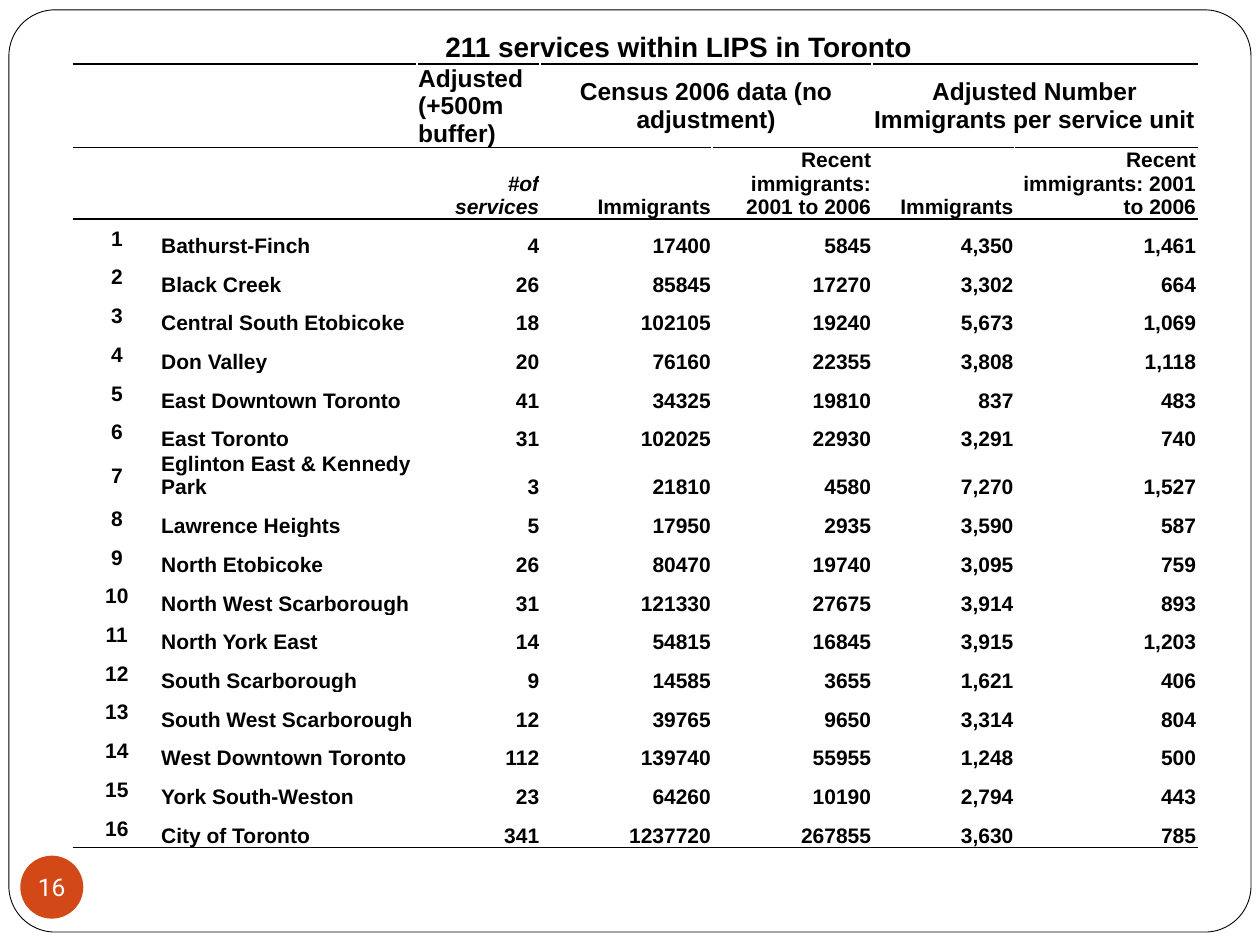
from lxml import etree
from pptx import Presentation
from pptx.dml.color import RGBColor
from pptx.enum import shapes, text
from pptx.oxml.ns import qn
from pptx.util import Cm, Pt

BLACK = RGBColor(0x00, 0x00, 0x00)
WHITE = RGBColor(0xFF, 0xFF, 0xFF)
ORANGE = RGBColor(0xD3, 0x48, 0x17)

LEFT, MID, RIGHT = text.PP_ALIGN.LEFT, text.PP_ALIGN.CENTER, text.PP_ALIGN.RIGHT
MIDDLE, BOTTOM = text.MSO_ANCHOR.MIDDLE, text.MSO_ANCHOR.BOTTOM

WIDTHS = [1.75, 5.18, 2.48, 3.46, 3.23, 2.87, 3.68]
HEADS = [0.64, 1.66, 1.43]
ROW, TALL = 0.78, 0.95

RECENT = "Recent immigrants: 2001 to 2006"
LABELS = ["#of services", "Immigrants", RECENT, "Immigrants", RECENT]

# Area, services, immigrants, recent, immigrants per unit, recent per unit
AREAS = [
    ("Bathurst-Finch", "4", "17400", "5845", "4,350", "1,461"),
    ("Black Creek", "26", "85845", "17270", "3,302", "664"),
    ("Central South Etobicoke", "18", "102105", "19240", "5,673", "1,069"),
    ("Don Valley", "20", "76160", "22355", "3,808", "1,118"),
    ("East Downtown Toronto", "41", "34325", "19810", "837", "483"),
    ("East Toronto", "31", "102025", "22930", "3,291", "740"),
    ("Eglinton East & Kennedy Park", "3", "21810", "4580", "7,270", "1,527"),
    ("Lawrence Heights", "5", "17950", "2935", "3,590", "587"),
    ("North Etobicoke", "26", "80470", "19740", "3,095", "759"),
    ("North West Scarborough", "31", "121330", "27675", "3,914", "893"),
    ("North York East", "14", "54815", "16845", "3,915", "1,203"),
    ("South Scarborough", "9", "14585", "3655", "1,621", "406"),
    ("South West Scarborough", "12", "39765", "9650", "3,314", "804"),
    ("West Downtown Toronto", "112", "139740", "55955", "1,248", "500"),
    ("York South-Weston", "23", "64260", "10190", "2,794", "443"),
    ("City of Toronto", "341", "1237720", "267855", "3,630", "785"),
]


def write(frame, words, size=12, font="Arial", color=BLACK, bold=True,
          italic=False, align=LEFT):
    para = frame.paragraphs[0]
    para.alignment = align
    run = para.add_run()
    run.text = words
    face = run.font
    face.size, face.name = Pt(size), font
    face.bold, face.italic = bold, italic
    face.color.rgb = color


def shape(slide, kind, box, fill):
    item = slide.shapes.add_shape(kind, *[Cm(v) for v in box])
    item.shadow.inherit = False
    item.fill.solid()
    item.fill.fore_color.rgb = fill
    return item


def rule(cell, side):
    """Draw a black line on one side of a cell: lnT or lnB."""
    props = cell._tc.get_or_add_tcPr()
    line = etree.Element(qn("a:" + side), w=str(Pt(1)))
    fill = etree.SubElement(line, qn("a:solidFill"))
    etree.SubElement(fill, qn("a:srgbClr"), val=str(BLACK))
    # Lines come before the fill, top before bottom
    props.insert(len(props.findall(qn("a:lnT"))), line)


def clear(cell):
    cell.fill.background()
    cell.margin_left = cell.margin_right = cell.margin_top = Cm(0.02)
    cell.margin_bottom = 0
    cell.text_frame.paragraphs[0].font.size = Pt(12)


def put(cell, words, anchor=BOTTOM, **look):
    cell.vertical_anchor = anchor
    write(cell.text_frame, words, **look)


def heads(grid):
    # Title and column groups
    for row, first, last in ((0, 1, 6), (1, 3, 4), (1, 5, 6)):
        grid.cell(row, first).merge(grid.cell(row, last))
    put(grid.cell(0, 1), "211 services within LIPS in Toronto", size=16, align=MID)
    put(grid.cell(1, 2), "Adjusted (+500m buffer)", MIDDLE, size=14)
    put(grid.cell(1, 3), "Census 2006 data (no adjustment)", MIDDLE,
        size=14, align=MID)
    put(grid.cell(1, 5), "Adjusted Number Immigrants per service unit", MIDDLE,
        size=14, align=MID)
    # Column labels
    for col, label in enumerate(LABELS, 2):
        put(grid.cell(2, col), label, align=RIGHT, italic=col == 2)


def body(grid):
    for num, (area, *values) in enumerate(AREAS, 1):
        row = num + len(HEADS) - 1
        put(grid.cell(row, 0), str(num), MIDDLE, align=MID)
        put(grid.cell(row, 1), area)
        for col, value in enumerate(values, 2):
            put(grid.cell(row, col), value, align=RIGHT)


def table(slide):
    highs = HEADS + [TALL if len(a[0]) > 25 else ROW for a in AREAS]
    frame = slide.shapes.add_table(len(highs), len(WIDTHS), Cm(1.48), Cm(0.64),
                                   Cm(sum(WIDTHS)), Cm(sum(highs)))
    grid = frame.table
    grid.first_row = grid.horz_banding = False
    for col, wide in zip(grid.columns, WIDTHS):
        col.width = Cm(wide)
    for row, high in zip(grid.rows, highs):
        row.height = Cm(high)
    # Lines around the heads and under the last row
    last = len(highs) - 1
    for r in range(len(highs)):
        for c in range(len(WIDTHS)):
            cell = grid.cell(r, c)
            clear(cell)
            if 1 <= r <= len(HEADS):
                rule(cell, "lnT")
            if r < len(HEADS) or r == last:
                rule(cell, "lnB")
    heads(grid)
    body(grid)


def badge(slide, words):
    disc = shape(slide, shapes.MSO_SHAPE.OVAL, (0.41, 17.25, 1.27, 1.27), ORANGE)
    disc.line.fill.background()
    frame = disc.text_frame
    frame.margin_left = frame.margin_right = 0
    frame.margin_top = frame.margin_bottom = 0
    frame.word_wrap = False
    frame.vertical_anchor = MIDDLE
    write(frame, words, size=14, font="Roboto", color=WHITE, bold=False, align=MID)


def main():
    deck = Presentation()
    deck.slide_width, deck.slide_height = Cm(25.4), Cm(19.05)
    slide = deck.slides.add_slide(deck.slide_layouts[6])

    # Rounded frame
    edge = shape(slide, shapes.MSO_SHAPE.ROUNDED_RECTANGLE,
                 (0.18, 0.2, 25.04, 18.59), WHITE)
    edge.adjustments[0] = 0.05
    edge.line.color.rgb = BLACK
    edge.line.width = Pt(0.5)

    # Services table and page number
    table(slide)
    badge(slide, "16")
    deck.save("out.pptx")


if __name__ == "__main__":
    main()
